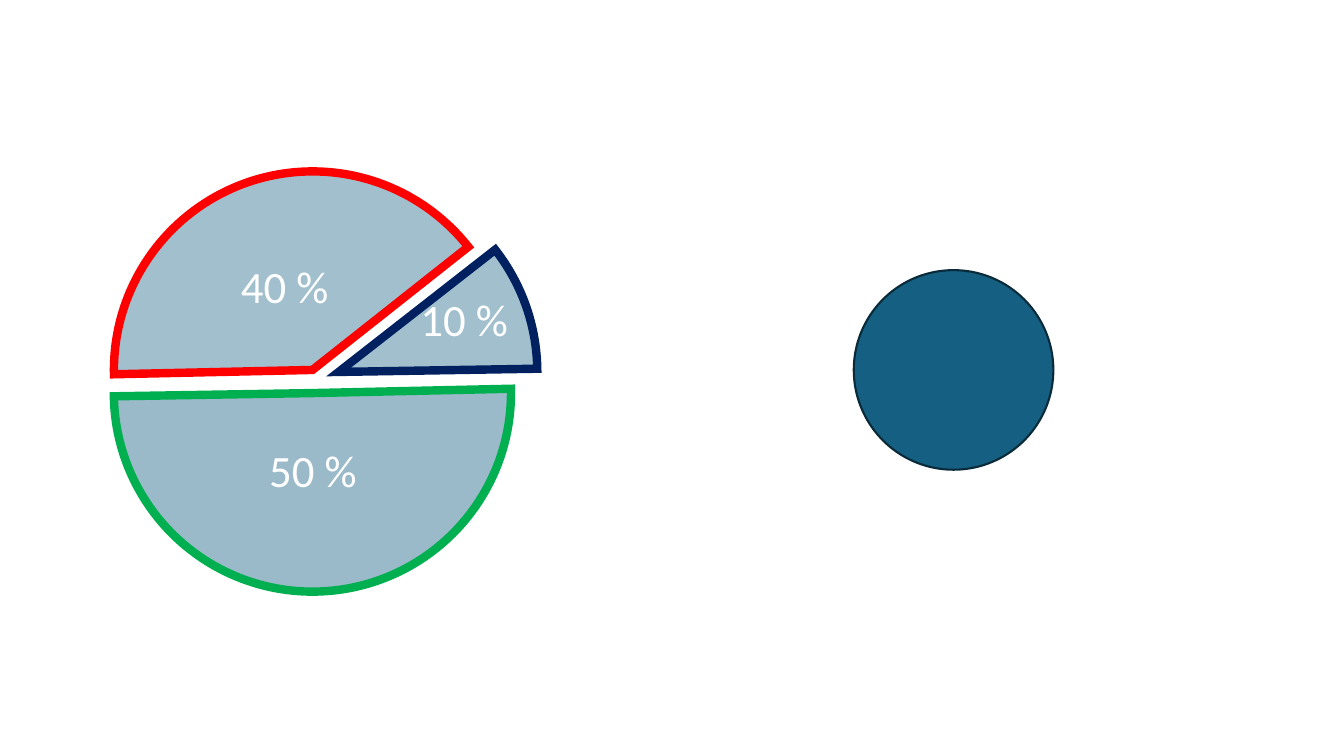
from dataclasses import dataclass

from lxml import etree
from pptx import Presentation
from pptx.dml.color import RGBColor
from pptx.enum.shapes import MSO_SHAPE
from pptx.enum.text import MSO_AUTO_SIZE, PP_ALIGN
from pptx.oxml.ns import qn
from pptx.shapes.autoshape import Shape
from pptx.slide import Slide
from pptx.util import Pt

PIE = MSO_SHAPE.PIE
OVAL = MSO_SHAPE.OVAL
CENTER = PP_ALIGN.CENTER
GROW = MSO_AUTO_SIZE.SHAPE_TO_FIT_TEXT

TEAL = RGBColor(0x15, 0x60, 0x82)
DARK = RGBColor(0x09, 0x2A, 0x39)
RED = RGBColor(0xFF, 0x00, 0x00)
NAVY = RGBColor(0x00, 0x20, 0x60)
GREEN = RGBColor(0x00, 0xB0, 0x50)
WHITE = RGBColor(0xFF, 0xFF, 0xFF)

SIZE = 283.68
LABEL = (105.84, 46.08)
FRAME = {"word_wrap": True, "auto_size": GROW}
FONT = {"name": "Calibri", "size": Pt(32)}
RIGHT, LEFT, SPLIT = 358.76, 179.06, 141.84


@dataclass(frozen=True)
class Slice:
    text: str
    left: float
    top: float
    turn: int
    start: float
    end: float
    color: RGBColor
    alpha: int
    label: tuple[float, float]


SLICES = [
    Slice("40 %", 81.36, 122.4, 180, RIGHT, 141.67, RED, 40, (150.48, 181.44)),
    Slice("10 %", 100.08, 123.84, 180, 142, LEFT, NAVY, 40, (278.64, 204.48)),
    Slice("50 %", 81.36, 138.96, 0, RIGHT, LEFT, GREEN, 43, (170.64, 312.48)),
]


def style(shape: Shape, color: RGBColor, width: float) -> None:
    shape.shadow.inherit = False
    shape.fill.solid()
    shape.fill.fore_color.rgb = TEAL
    shape.line.color.rgb = color
    shape.line.width = Pt(width)


def draw_slice(slide: Slide, part: Slice) -> None:
    group = slide.shapes.add_group_shape()
    pie = group.shapes.add_shape(
        PIE, Pt(part.left), Pt(part.top), Pt(SIZE), Pt(SIZE)
    )
    pie.rotation = part.turn
    for i, angle in enumerate((part.start, part.end)):
        pie.adjustments[i] = angle * 0.6
    style(pie, part.color, 6)
    props = pie.element.spPr
    tint = props.find(qn("a:solidFill")).find(qn("a:srgbClr"))
    etree.SubElement(tint, qn("a:alpha"), val=str(part.alpha * 1000))
    etree.SubElement(props.find(qn("a:ln")), qn("a:miter"), lim="800000")

    box = group.shapes.add_textbox(*map(Pt, part.label + LABEL))
    for key, value in FRAME.items():
        setattr(box.text_frame, key, value)
    para = box.text_frame.paragraphs[0]
    para.alignment = CENTER
    run = para.add_run()
    run.text = part.text
    for key, value in FONT.items():
        setattr(run.font, key, value)
    run.font.color.rgb = WHITE


def main() -> None:
    deck = Presentation()
    deck.slide_width, deck.slide_height = Pt(960), Pt(540)
    slide = deck.slides.add_slide(deck.slide_layouts[6])
    for part in SLICES:
        draw_slice(slide, part)
    disc = slide.shapes.add_shape(
        OVAL, Pt(609.84), Pt(192.96), Pt(142.56), Pt(142.56)
    )
    style(disc, DARK, 1.5)
    deck.save("out.pptx")


if __name__ == "__main__":
    main()
